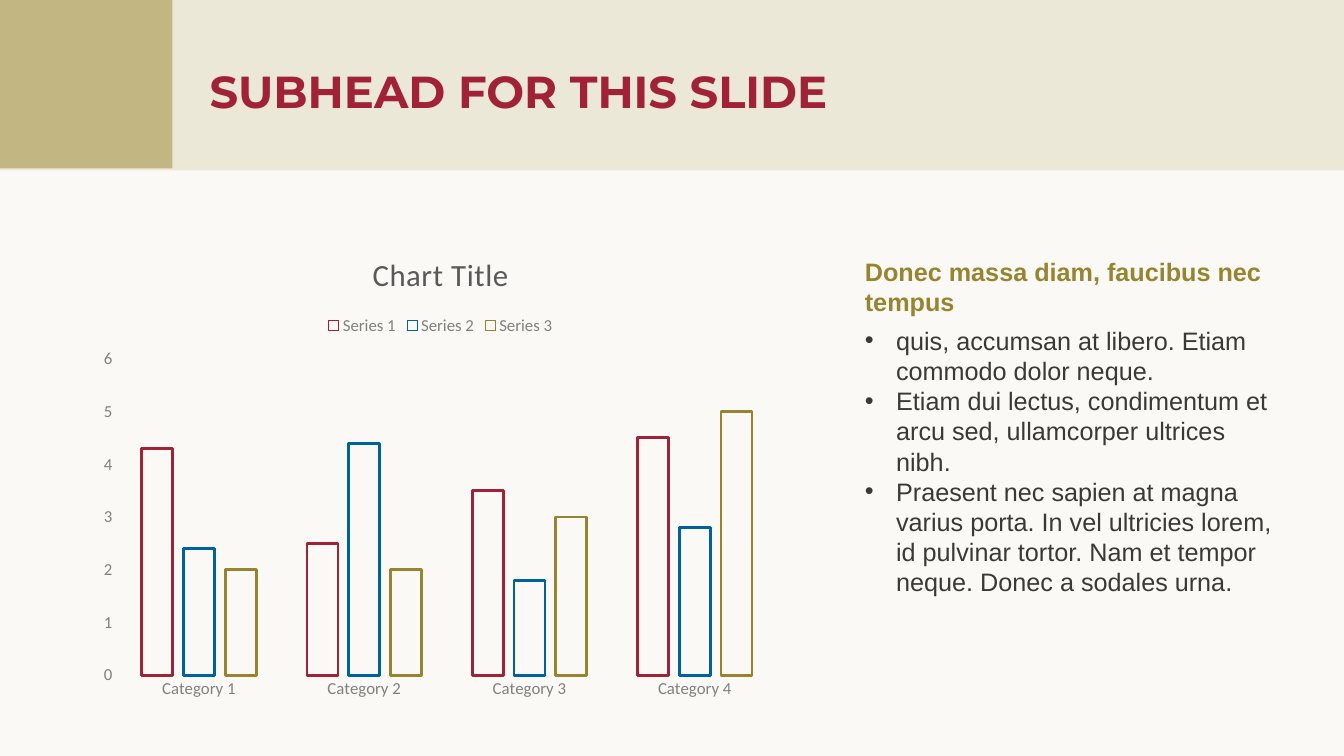
from lxml import etree
from pptx import Presentation
from pptx import util as u
from pptx.chart.data import CategoryChartData
from pptx.dml.color import RGBColor
from pptx.enum import chart as ch, shapes, text
from pptx.oxml.ns import qn

TITLE = "SUBHEAD FOR THIS SLIDE"
HEAD = "Donec massa diam, faucibus nec tempus"
POINTS = [
    "quis, accumsan at libero. Etiam commodo dolor neque.",
    "Etiam dui lectus, condimentum et arcu sed, ullamcorper ultrices nibh.",
    "Praesent nec sapien at magna varius porta. In vel ultricies lorem, "
    "id pulvinar tortor. Nam et tempor neque. Donec a sodales urna.",
]
CATS = ["Category 1", "Category 2", "Category 3", "Category 4"]
SERIES = [
    ("Series 1", (4.3, 2.5, 3.5, 4.5), "A12237"),
    ("Series 2", (2.4, 4.4, 1.8, 2.8), "0061A0"),
    ("Series 3", (2, 2, 3, 5), "988430"),
]
BANDS = [
    ((0, 1.67, 13.33, 5.83), "FBF9F5"),
    ((0, 0, 13.33, 1.69), "ECE8D8"),
    ((0, 0, 1.71, 1.67), "C2B683"),
]


def color(code):
    return RGBColor.from_string(code)


def place(box):
    return [u.Inches(n) for n in box]


def style(font, name, size, code, bold=False):
    font.name, font.size, font.bold = name, u.Pt(size), bold
    font.color.rgb = color(code)


def add_band(slide, box, code):
    band = slide.shapes.add_shape(shapes.MSO_SHAPE.RECTANGLE, *place(box))
    band.shadow.inherit = False
    band.fill.solid()
    band.fill.fore_color.rgb = color(code)
    band.line.fill.background()


def add_frame(slide, box):
    frame = slide.shapes.add_textbox(*place(box)).text_frame
    frame.word_wrap = True
    return frame


def add_title(slide):
    frame = add_frame(slide, (1.98, 0.48, 11.35, 0.9))
    frame.vertical_anchor = text.MSO_ANCHOR.MIDDLE
    para = frame.paragraphs[0]
    para.text = TITLE
    para.line_spacing = 0.9
    style(para.font, "Montserrat", 32, "A12237", True)


def add_notes(slide):
    frame = add_frame(slide, (8.48, 2.49, 4.24, 4.12))
    head = frame.paragraphs[0]
    head.text = HEAD
    head.space_after = u.Pt(6)
    style(head.font, "Arial", 18, "988430", True)
    for point in POINTS:
        para = frame.add_paragraph()
        para.text = point
        props = para._p.get_or_add_pPr()
        props.set("marL", str(u.Inches(0.31)))
        props.set("indent", str(-u.Inches(0.31)))
        etree.SubElement(props, qn("a:buFont")).set("typeface", "Arial")
        etree.SubElement(props, qn("a:buChar")).set("char", "•")
        style(para.font, "Arial", 18, "3B3838")


def add_bars(slide):
    data = CategoryChartData()
    data.categories = CATS
    for name, vals, _ in SERIES:
        data.add_series(name, vals)
    chart = slide.shapes.add_chart(
        ch.XL_CHART_TYPE.COLUMN_CLUSTERED, *place((0.89, 2.31, 6.96, 4.72)), data
    ).chart
    style(chart.font, "Calibri", 10, "000000")

    chart.has_title = True
    para = chart.chart_title.text_frame.paragraphs[0]
    run = para.add_run()
    run.text = "Chart Title"
    style(run.font, "Calibri", 22, "595959")
    run.font._element.set("spc", "50")
    chart.chart_title.include_in_layout = False

    chart.has_legend = True
    chart.legend.position = ch.XL_LEGEND_POSITION.TOP
    chart.legend.include_in_layout = False
    style(chart.legend.font, "Calibri", 12, "808080")

    for axis in (chart.category_axis, chart.value_axis):
        axis.has_major_gridlines = False
        axis.major_tick_mark = axis.minor_tick_mark = ch.XL_TICK_MARK.NONE
        axis.format.line.fill.background()
        style(axis.tick_labels.font, "Calibri", 12, "808080")
    scale = chart.value_axis
    scale.minimum_scale, scale.maximum_scale, scale.major_unit = 0, 6, 1

    plot = chart.plots[0]
    plot.vary_by_categories = False
    plot.gap_width, plot.overlap = 164, -35
    for bar, (_, _, code) in zip(plot.series, SERIES):
        bar.format.fill.background()
        bar.format.line.color.rgb = color(code)
        bar.format.line.width = u.Pt(2)


def main():
    deck = Presentation()
    deck.slide_width, deck.slide_height = u.Inches(13.33), u.Inches(7.5)
    slide = deck.slides.add_slide(deck.slide_layouts[6])
    for box, code in BANDS:
        add_band(slide, box, code)
    add_title(slide)
    add_notes(slide)
    add_bars(slide)
    deck.save("out.pptx")


if __name__ == "__main__":
    main()
